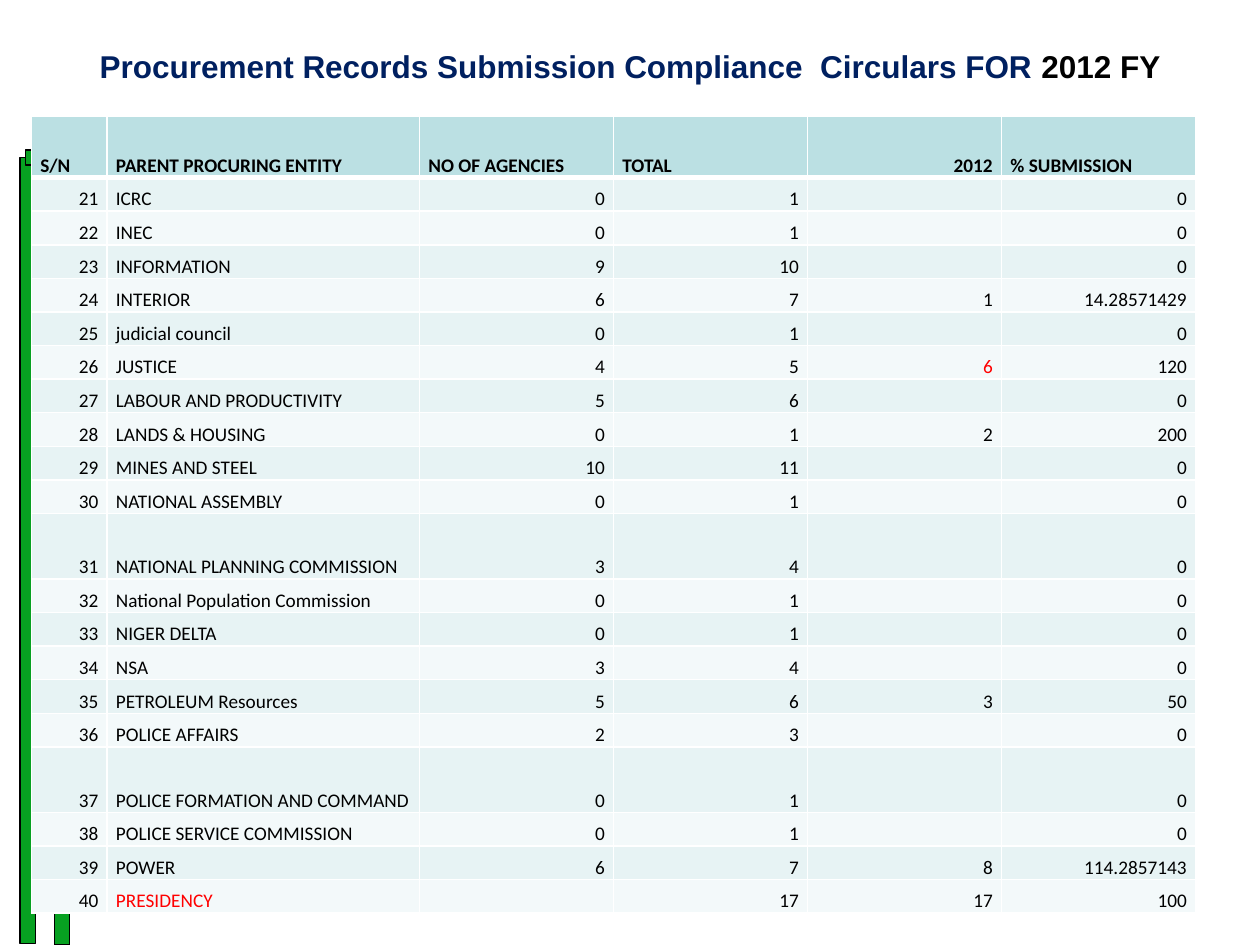
from lxml import etree
from pptx import Presentation
from pptx.dml.color import RGBColor
from pptx.enum.shapes import MSO_SHAPE
from pptx.enum.text import MSO_ANCHOR, PP_ALIGN
from pptx.oxml.ns import qn
from pptx.util import Inches, Pt

RECTANGLE = MSO_SHAPE.RECTANGLE
BOTTOM, MIDDLE = MSO_ANCHOR.BOTTOM, MSO_ANCHOR.MIDDLE
LEFT, CENTER, RIGHT = PP_ALIGN.LEFT, PP_ALIGN.CENTER, PP_ALIGN.RIGHT

THEME = {
    "title_font": "Arial", "title_size": 18,
    "table_font": "Calibri", "table_size": 11,
    "navy": "002060", "black": "000000", "red": "FF0000", "green": "07A121",
    "header": "BBE0E3", "bands": ("E7F3F4", "F3F9FA"), "border": "FFFFFF",
}


def add_run(paragraph, text, name, size, color, bold):
    run = paragraph.add_run()
    run.text = text
    for attribute, value in {"name": name, "size": Pt(size), "bold": bold}.items():
        setattr(run.font, attribute, value)
    run.font.color.rgb = RGBColor.from_string(color)


def set_borders(cell, widths):
    """Draw the left, right, top and bottom borders, ahead of the cell's fill."""
    properties = cell._tc.get_or_add_tcPr()
    for position, (side, width) in enumerate(zip("LRTB", widths)):
        line = etree.Element(qn(f"a:ln{side}"), w=str(Pt(width)))
        fill = etree.SubElement(line, qn("a:solidFill"))
        etree.SubElement(fill, qn("a:srgbClr"), val=THEME["border"])
        properties.insert(position, line)


presentation = Presentation()
presentation.slide_width, presentation.slide_height = Inches(10), Inches(7.5)
slide = presentation.slides.add_slide(presentation.slide_layouts[5])

# Title
title = slide.shapes.title
title.left, title.top, title.width, title.height = map(Inches, (0.5, 0.3, 9, 0.45))
title.text_frame.vertical_anchor = MIDDLE
title.text_frame.word_wrap = True
title_paragraph = title.text_frame.paragraphs[0]
title_paragraph.alignment = CENTER
for text, color in (
    ("Procurement Records Submission Compliance  Circulars FOR ", "navy"),
    ("2012 FY", "black"),
):
    add_run(title_paragraph, text, THEME["title_font"], THEME["title_size"],
            THEME[color], True)

# Green frame bars behind the table
for box in ((0.16, 1.25, 0.12, 6.24), (0.43, 1.26, 0.12, 6.24), (0.2, 1.19, 9.29, 0.12)):
    bar = slide.shapes.add_shape(RECTANGLE, *map(Inches, box))
    bar.shadow.inherit = False
    bar.fill.solid()
    bar.fill.fore_color.rgb = RGBColor.from_string(THEME["green"])
    bar.line.color.rgb = RGBColor.from_string(THEME["black"])
    bar.line.width = Pt(0.75)

# Table content: entity, agencies, total, 2012, % submission
HEADERS = ("S/N", "PARENT PROCURING ENTITY", "NO OF AGENCIES", "TOTAL", "2012",
           "% SUBMISSION")
FIRST_NUMBER = 21
ENTITIES = (
    ("ICRC", "0", "1", "", "0"),
    ("INEC", "0", "1", "", "0"),
    ("INFORMATION", "9", "10", "", "0"),
    ("INTERIOR", "6", "7", "1", "14.28571429"),
    ("judicial council", "0", "1", "", "0"),
    ("JUSTICE", "4", "5", "6", "120"),
    ("LABOUR AND PRODUCTIVITY", "5", "6", "", "0"),
    ("LANDS & HOUSING", "0", "1", "2", "200"),
    ("MINES AND STEEL", "10", "11", "", "0"),
    ("NATIONAL ASSEMBLY", "0", "1", "", "0"),
    ("NATIONAL PLANNING COMMISSION", "3", "4", "", "0"),
    ("National Population Commission", "0", "1", "", "0"),
    ("NIGER DELTA", "0", "1", "", "0"),
    ("NSA", "3", "4", "", "0"),
    ("PETROLEUM Resources", "5", "6", "3", "50"),
    ("POLICE AFFAIRS", "2", "3", "", "0"),
    ("POLICE FORMATION AND COMMAND", "0", "1", "", "0"),
    ("POLICE SERVICE COMMISSION", "0", "1", "", "0"),
    ("POWER", "6", "7", "8", "114.2857143"),
    ("PRESIDENCY", "", "17", "17", "100"),
)
rows = [HEADERS] + [
    (str(number), *entity) for number, entity in enumerate(ENTITIES, FIRST_NUMBER)
]
RED_CELLS = {(6, 4), (20, 1)}
CELL_FORMAT = {
    "vertical_anchor": BOTTOM,
    "margin_left": Inches(0.07), "margin_right": Inches(0.07),
    "margin_top": 0, "margin_bottom": 0,
}

# Table grid: a few tall rows, the others share the remaining height
TABLE_HEIGHT = 6.33
TALL_ROWS = {0: 0.49, 11: 0.52, 17: 0.52}
row_height = (TABLE_HEIGHT - sum(TALL_ROWS.values())) / (len(rows) - len(TALL_ROWS))
table = slide.shapes.add_table(
    len(rows), len(HEADERS), Inches(0.25), Inches(0.92), Inches(9.25), Inches(TABLE_HEIGHT)
).table
for column, width in zip(table.columns, (0.6, 2.48, 1.54, 1.54, 1.54, 1.54)):
    column.width = Inches(width)

# Table cells
for row_index, values in enumerate(rows):
    is_header = row_index == 0
    table.rows[row_index].height = Inches(TALL_ROWS.get(row_index, row_height))
    background = THEME["header"] if is_header else THEME["bands"][(row_index - 1) % 2]
    borders = (1, 1, 3 if row_index == 1 else 1, 3 if is_header else 1)
    for column_index, value in enumerate(values):
        cell = table.cell(row_index, column_index)
        for attribute, setting in CELL_FORMAT.items():
            setattr(cell, attribute, setting)
        cell.fill.solid()
        cell.fill.fore_color.rgb = RGBColor.from_string(background)
        set_borders(cell, borders)

        paragraph = cell.text_frame.paragraphs[0]
        paragraph.line_spacing = 1.15
        is_left = column_index != 4 if is_header else column_index == 1
        paragraph.alignment = LEFT if is_left else RIGHT
        if value:
            color = "red" if (row_index, column_index) in RED_CELLS else "black"
            add_run(paragraph, value, THEME["table_font"], THEME["table_size"],
                    THEME[color], is_header)
        else:
            # An empty cell still needs the small type size to keep its row low
            end = etree.SubElement(paragraph._p, qn("a:endParaRPr"))
            end.set("sz", str(THEME["table_size"] * 100))

presentation.save("out.pptx")
